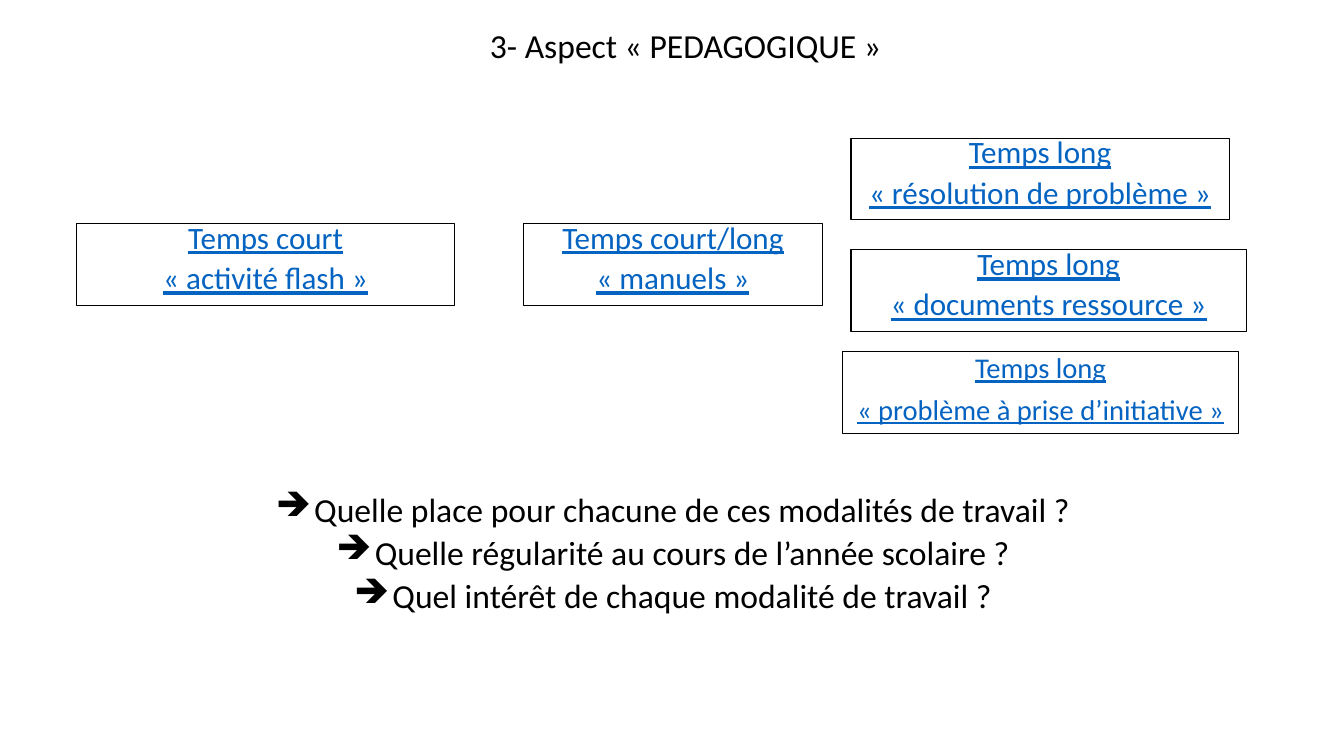
from dataclasses import dataclass

from lxml import etree
from pptx import Presentation
from pptx import util as u
from pptx.dml.color import RGBColor
from pptx.enum import shapes, text
from pptx.oxml.ns import qn

PX = 9144  # 100 px to the inch


@dataclass(frozen=True)
class Theme:
    font: str = "Calibri"
    ink: RGBColor = RGBColor(0x00, 0x00, 0x00)
    link: RGBColor = RGBColor(0x05, 0x63, 0xC1)
    body_size: float = 24
    box_size: float = 22.2
    small_box_size: float = 20.4
    outline: float = 0.75


THEME = Theme()


@dataclass(frozen=True)
class Activity:
    duration: str
    name: str
    left: int
    top: int
    width: int
    size: float = THEME.box_size
    line_spacing: float = 0.7


TITLE = "3- Aspect «\u00a0PEDAGOGIQUE\u00a0»"
BOX_HEIGHT = 81
ACTIVITIES = [
    Activity("Temps court", "«\u00a0activité flash\u00a0»", 76, 222, 375),
    Activity("Temps court/long", "«\u00a0manuels\u00a0»", 519, 222, 297),
    Activity("Temps long", "«\u00a0résolution de problème\u00a0»", 844, 137, 375),
    Activity("Temps long", "«\u00a0documents ressource\u00a0»", 844, 248, 392),
    Activity("Temps long", "«\u00a0problème à prise d’initiative\u00a0»", 836, 349, 392,
             THEME.small_box_size, 0.8),
]
QUESTIONS = [
    "Quelle place pour chacune de ces modalités de travail\u00a0?",
    "Quelle régularité au cours de l’année scolaire\u00a0?",
    "Quel intérêt de chaque modalité de travail\u00a0?",
]
BULLET_INDENT = 38


def place(shape, left: int, top: int, width: int, height: int) -> None:
    shape.left, shape.top = u.Emu(left * PX), u.Emu(top * PX)
    shape.width, shape.height = u.Emu(width * PX), u.Emu(height * PX)


def write_lines(frame, lines: list[str], size: float, color: RGBColor,
                line_spacing: float, space_before: float = 0,
                underline: bool = False) -> None:
    """Fill a text frame from the top, one centred paragraph per line."""
    frame.word_wrap = True
    frame.auto_size = text.MSO_AUTO_SIZE.NONE
    frame.vertical_anchor = text.MSO_ANCHOR.TOP
    for index, line in enumerate(lines):
        paragraph = frame.add_paragraph() if index else frame.paragraphs[0]
        paragraph.alignment = text.PP_ALIGN.CENTER
        paragraph.line_spacing = line_spacing
        paragraph.space_before = u.Pt(space_before)
        run = paragraph.add_run()
        run.text = line
        run.font.name = THEME.font
        run.font.size = u.Pt(size)
        run.font.color.rgb = color
        run.font.underline = underline


def add_arrow_bullet(paragraph) -> None:
    properties = paragraph._p.get_or_add_pPr()
    properties.set("marL", str(BULLET_INDENT * PX))
    properties.set("indent", str(-BULLET_INDENT * PX))
    etree.SubElement(properties, qn("a:buChar")).set("char", "➔")


def add_activity(slide, activity: Activity) -> None:
    box = slide.shapes.add_shape(shapes.MSO_SHAPE.RECTANGLE, 0, 0, 0, 0)
    place(box, activity.left, activity.top, activity.width, BOX_HEIGHT)
    box.shadow.inherit = False
    box.fill.background()
    box.line.color.rgb = THEME.ink
    box.line.width = u.Pt(THEME.outline)
    write_lines(box.text_frame, [activity.duration, activity.name], activity.size,
                THEME.link, activity.line_spacing, space_before=10, underline=True)


def add_questions(slide) -> None:
    box = slide.shapes.add_textbox(0, 0, 0, 0)
    place(box, 190, 477, 955, 139)
    write_lines(box.text_frame, QUESTIONS, THEME.body_size, THEME.ink, 1.07)
    for paragraph in box.text_frame.paragraphs:
        add_arrow_bullet(paragraph)


def main() -> None:
    presentation = Presentation()
    presentation.slide_width = u.Emu(1333 * PX)
    presentation.slide_height = u.Emu(750 * PX)
    slide = presentation.slides.add_slide(presentation.slide_layouts.get_by_name("Title Only"))

    title = slide.shapes.title
    place(title, 180, 24, 1000, 50)
    write_lines(title.text_frame, [TITLE], THEME.body_size, THEME.ink, 0.9)
    for activity in ACTIVITIES:
        add_activity(slide, activity)
    add_questions(slide)

    presentation.save("out.pptx")


if __name__ == "__main__":
    main()
